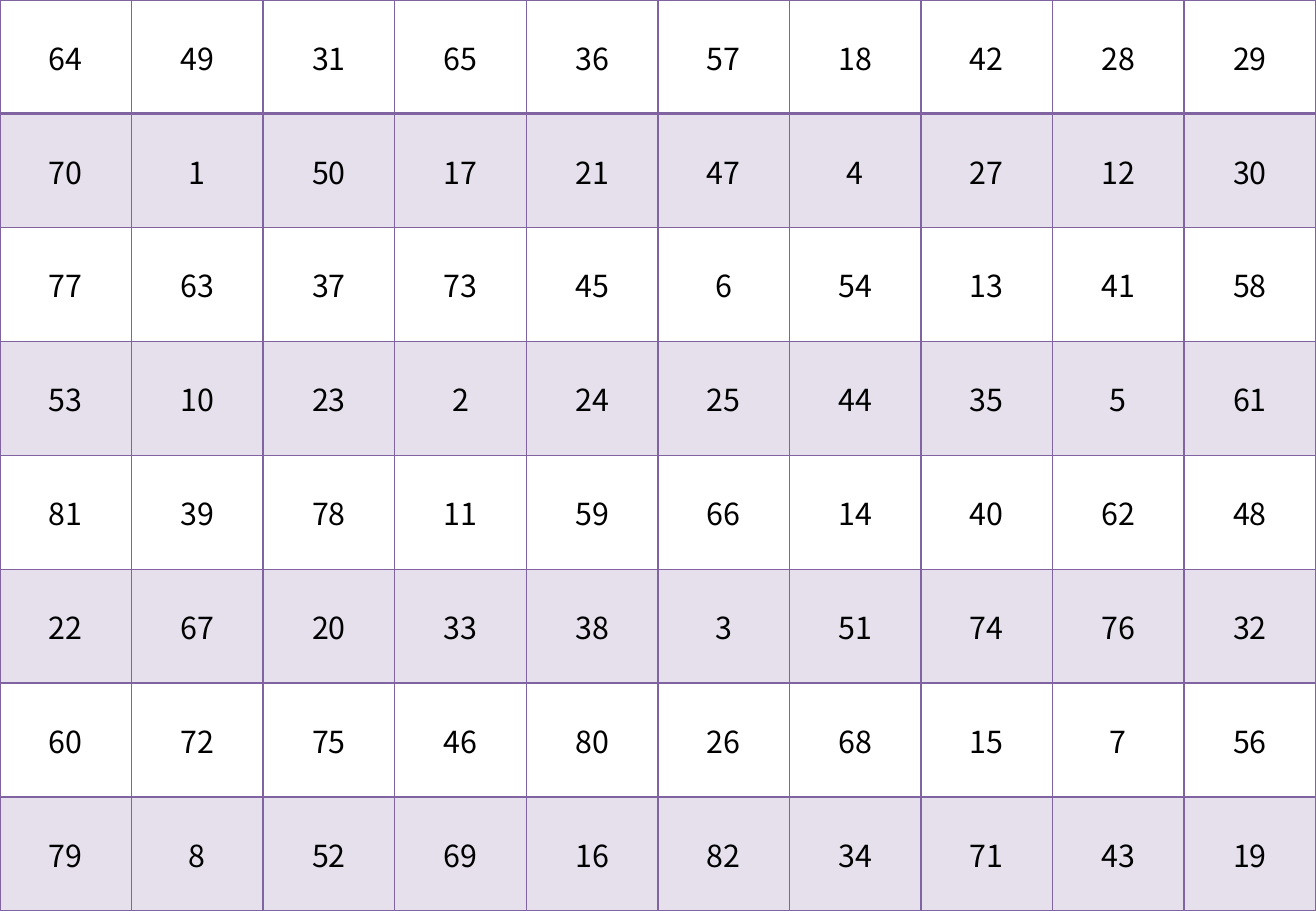
from typing import NamedTuple

from lxml import etree
from pptx import Presentation
from pptx.dml.color import RGBColor
from pptx.enum.text import MSO_ANCHOR, PP_ALIGN
from pptx.oxml.ns import qn
from pptx.table import _Cell
from pptx.util import Pt

MID = MSO_ANCHOR.MIDDLE
CENTER = PP_ALIGN.CENTER
SCALE = 3810
WIDE, HIGH = 2600, 1800
BLACK, PLUM = "000000", "8064A2"
TINT = 20
THIN, THICK = 1, 2
FONT = {"name": "Noto Sans CJK KR", "size": Pt(18), "bold": False}
TABLE = {"first_row": False, "horz_banding": False}

GRID = [
    [64, 49, 31, 65, 36, 57, 18, 42, 28, 29],
    [70, 1, 50, 17, 21, 47, 4, 27, 12, 30],
    [77, 63, 37, 73, 45, 6, 54, 13, 41, 58],
    [53, 10, 23, 2, 24, 25, 44, 35, 5, 61],
    [81, 39, 78, 11, 59, 66, 14, 40, 62, 48],
    [22, 67, 20, 33, 38, 3, 51, 74, 76, 32],
    [60, 72, 75, 46, 80, 26, 68, 15, 7, 56],
    [79, 8, 52, 69, 16, 82, 34, 71, 43, 19],
]


class Band(NamedTuple):
    tinted: bool
    top: int
    bottom: int


def px(count: int) -> int:
    return count * SCALE


def color(code: str) -> RGBColor:
    return RGBColor.from_string(code)


def apply(target: object, values: dict) -> None:
    for name, value in values.items():
        setattr(target, name, value)


def edge(cell: _Cell, side: str, width: int) -> None:
    props = cell._tc.get_or_add_tcPr()
    line = etree.SubElement(props, qn(f"a:ln{side}"), w=str(Pt(width)))
    fill = etree.SubElement(line, qn("a:solidFill"))
    etree.SubElement(fill, qn("a:srgbClr"), val=PLUM)


def paint(cell: _Cell, tinted: bool) -> None:
    if not tinted:
        cell.fill.background()
        return
    cell.fill.solid()
    cell.fill.fore_color.rgb = color(PLUM)
    tone = cell._tc.tcPr.find(f"{qn('a:solidFill')}/{qn('a:srgbClr')}")
    etree.SubElement(tone, qn("a:alpha"), val=str(TINT * 1000))


def draw(cell: _Cell, number: int, band: Band) -> None:
    cell.text = str(number)
    cell.vertical_anchor = MID
    para = cell.text_frame.paragraphs[0]
    para.alignment = CENTER
    font = para.runs[0].font
    apply(font, FONT)
    font.color.rgb = color(BLACK)
    widths = {"L": THIN, "R": THIN, "T": band.top, "B": band.bottom}
    for side, width in widths.items():
        edge(cell, side, width)
    paint(cell, band.tinted)


def main() -> None:
    deck = Presentation()
    apply(deck, {"slide_width": px(WIDE), "slide_height": px(HIGH)})
    slide = deck.slides.add_slide(deck.slide_layouts[6])
    frame = slide.shapes.add_table(
        len(GRID), len(GRID[0]), 0, 0, px(WIDE), px(HIGH)
    )
    table = frame.table
    apply(table, TABLE)
    for row, numbers in enumerate(GRID):
        band = Band(
            tinted=row % 2 == 1,
            top=THICK if row == 1 else THIN,
            bottom=THICK if row == 0 else THIN,
        )
        for col, number in enumerate(numbers):
            draw(table.cell(row, col), number, band)
    deck.save("out.pptx")


if __name__ == "__main__":
    main()
